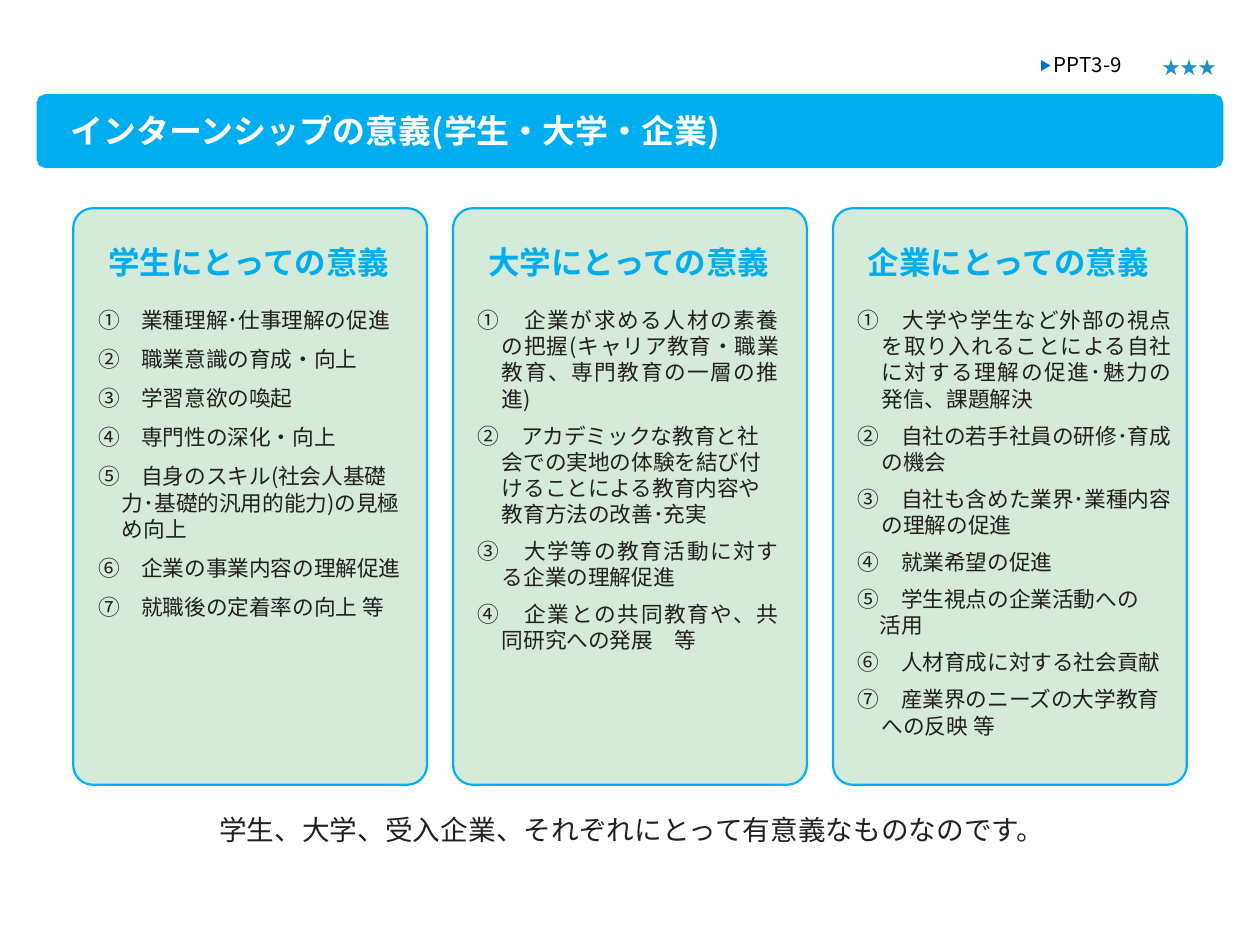
from dataclasses import dataclass

import pptx
import pptx.dml.color
import pptx.enum.shapes
import pptx.enum.text
import pptx.oxml.ns
import pptx.util
from lxml import etree

Pt = pptx.util.Pt
FONT = "Noto Sans CJK JP"
CYAN, CARD_BORDER, CARD_FILL, INK = "00AEEF", "00B0F0", "D5EAD8", "231F20"
WHITE, BLACK, MARKER_BLUE, STAR_BLUE = "FFFFFF", "000000", "0070C0", "1B93C9"
LINE_RATIO = 1.2
CARD_LEFT, CARD_TOP, CARD_WIDTH, CARD_HEIGHT, CARD_PITCH = 41.8, 119, 202.2, 329.5, 217.1
ITEM_SIZE, FIRST_ITEM_GAP = 12.4, 14.9
HANGING = (14.4, -13.7)
FLUSH = (0.7, 0)


@dataclass
class Run:
    text: str
    size: float
    color: str
    bold: bool = False
    raised: bool = False


@dataclass
class Paragraph:
    runs: list[Run]
    before: float = 0
    indent: tuple[float, float] = FLUSH
    line: float | None = None
    justified: bool = False


@dataclass
class Item:
    text: str
    hanging: bool = True
    justified: bool = False
    continues: bool = False


@dataclass
class Card:
    title: str
    text_width: float
    items: list[Item]
    gap: float = 6.3
    line: float | None = None


CARDS = [
    Card("学生にとっての意義", 176.4, [
        Item("①　業種理解･仕事理解の促進", hanging=False),
        Item("②　職業意識の育成・向上", hanging=False),
        Item("③　学習意欲の喚起", hanging=False),
        Item("④　専門性の深化・向上", hanging=False),
        Item("⑤　自身のスキル(社会人基礎力･基礎的汎用的能力)の見極め向上"),
        Item("⑥　企業の事業内容の理解促進", hanging=False),
        Item("⑦　就職後の定着率の向上 等", hanging=False),
    ], gap=6.8, line=15.4),
    Card("大学にとっての意義", 172.8, [
        Item("①　企業が求める人材の素養の把握(キャリア教育・職業教育、専門教育の一層の推進)",
             justified=True),
        Item("②　アカデミックな教育と社会での実地の体験を結び付けることによる教育内容や教育方法の改善･充実"),
        Item("③　大学等の教育活動に対する企業の理解促進", justified=True),
        Item("④　企業との共同教育や、共同研究への発展　等", justified=True),
    ]),
    Card("企業にとっての意義", 180, [
        Item("①　大学や学生など外部の視点を取り入れることによる自社に対する理解の促進･魅力の発信、課題解決",
             justified=True),
        Item("②　自社の若手社員の研修･育成の機会"),
        Item("③　自社も含めた業界･業種内容の理解の促進"),
        Item("④　就業希望の促進", hanging=False),
        Item("⑤　学生視点の企業活動への"),
        Item("　活用", continues=True),
        Item("⑥　人材育成に対する社会貢献", hanging=False),
        Item("⑦　産業界のニーズの大学教育への反映 等"),
    ]),
]


def rgb(color: str) -> pptx.dml.color.RGBColor:
    return pptx.dml.color.RGBColor.from_string(color)


def add_run(paragraph, run: Run) -> None:
    text_run = paragraph.add_run()
    text_run.text = run.text
    font = text_run.font
    font.size, font.bold, font.name = Pt(run.size), run.bold, FONT
    font.color.rgb = rgb(run.color)
    properties = text_run._r.get_or_add_rPr()
    etree.SubElement(properties, pptx.oxml.ns.qn("a:ea"), typeface=FONT)
    if run.raised:
        properties.set("baseline", "9000")


def add_text(slide, left: float, top: float, width: float, height: float,
             paragraphs: list[Paragraph], inset: tuple[float, float] = (0, 0.7),
             wrap: bool = True) -> None:
    """Add a text box; inset is the left/right and the top margin."""
    box = slide.shapes.add_textbox(Pt(left), Pt(top), Pt(width), Pt(height))
    frame = box.text_frame
    frame.word_wrap = wrap
    frame.margin_left = frame.margin_right = Pt(inset[0])
    frame.margin_top, frame.margin_bottom = Pt(inset[1]), 0
    for index, content in enumerate(paragraphs):
        paragraph = frame.add_paragraph() if index else frame.paragraphs[0]
        paragraph.space_before = Pt(content.before)
        largest = max(run.size for run in content.runs)
        paragraph.line_spacing = Pt(content.line or round(largest * LINE_RATIO, 1))
        if content.justified:
            paragraph.alignment = pptx.enum.text.PP_ALIGN.JUSTIFY
        margin, first_line = content.indent
        properties = paragraph._p.get_or_add_pPr()
        properties.set("marL", str(Pt(margin)))
        properties.set("indent", str(Pt(first_line)))
        for run in content.runs:
            add_run(paragraph, run)


def add_banner(slide) -> None:
    """Draw the title band, its corners cut by the same short steps."""
    left, top, right, bottom = 20.9, 53.8, 699.1, 96
    steps = [(0, 11.5), (0, 5), (1.4, 1.4), (5, 0), (11.5, 0)]
    points = [(left + x, top + y) for x, y in steps]
    points += [(right - x, top + y) for x, y in reversed(steps)]
    points += [(right - x, bottom - y) for x, y in steps]
    points += [(left + x, bottom - y) for x, y in reversed(steps)]
    corners = [(Pt(x), Pt(y)) for x, y in points]
    builder = slide.shapes.build_freeform(*corners[0])
    builder.add_line_segments(corners[1:], close=True)
    banner = builder.convert_to_shape()
    banner.shadow.inherit = False
    banner.fill.solid()
    banner.fill.fore_color.rgb = rgb(CYAN)
    banner.line.fill.background()


def add_card(slide, left: float, card: Card) -> None:
    panel = slide.shapes.add_shape(
        pptx.enum.shapes.MSO_SHAPE.ROUNDED_RECTANGLE,
        Pt(left), Pt(CARD_TOP), Pt(CARD_WIDTH), Pt(CARD_HEIGHT))
    panel.adjustments[0] = 0.056
    panel.shadow.inherit = False
    panel.fill.solid()
    panel.fill.fore_color.rgb = rgb(CARD_FILL)
    panel.line.color.rgb = rgb(CARD_BORDER)
    panel.line.width = Pt(1.25)

    paragraphs = [Paragraph([Run(card.title, 18, CYAN, bold=True)], 0.9, (6.5, 0))]
    for index, item in enumerate(card.items):
        gap = card.gap if index else FIRST_ITEM_GAP
        paragraphs.append(Paragraph(
            [Run(item.text, ITEM_SIZE, INK)],
            before=0 if item.continues else gap,
            indent=HANGING if item.hanging else FLUSH,
            line=card.line if index else None,
            justified=item.justified))
    add_text(slide, left + 13.5, 138.2, card.text_width, 290, paragraphs)


def main() -> None:
    presentation = pptx.Presentation()
    presentation.slide_width, presentation.slide_height = Pt(720), Pt(540)
    slide = presentation.slides.add_slide(presentation.slide_layouts[6])

    add_banner(slide)
    add_text(slide, 39.6, 61.9, 510.5, 24, [Paragraph(
        [Run("インターンシップの意義(学生・大学・企業)", 18.8, WHITE, bold=True)], 1.1)],
        inset=(0, 1.4))
    for index, card in enumerate(CARDS):
        add_card(slide, CARD_LEFT + index * CARD_PITCH, card)
    add_text(slide, 124.6, 463.7, 518.4, 20, [Paragraph(
        [Run("学生、大学、受入企業、それぞれにとって有意義なものなのです。", 15.8, INK)], 0.9)])
    add_text(slide, 593.3, 28.8, 71.3, 15, [Paragraph(
        [Run("▶ ", 11.7, MARKER_BLUE, raised=True), Run("PPT3-9", 11.7, BLACK)], 1)])
    add_text(slide, 657.4, 28.8, 45.4, 19.4, [Paragraph(
        [Run("★★★", 10.3, STAR_BLUE)], indent=(0, 0))], inset=(7.2, 3.6), wrap=False)

    presentation.save("out.pptx")


if __name__ == "__main__":
    main()
